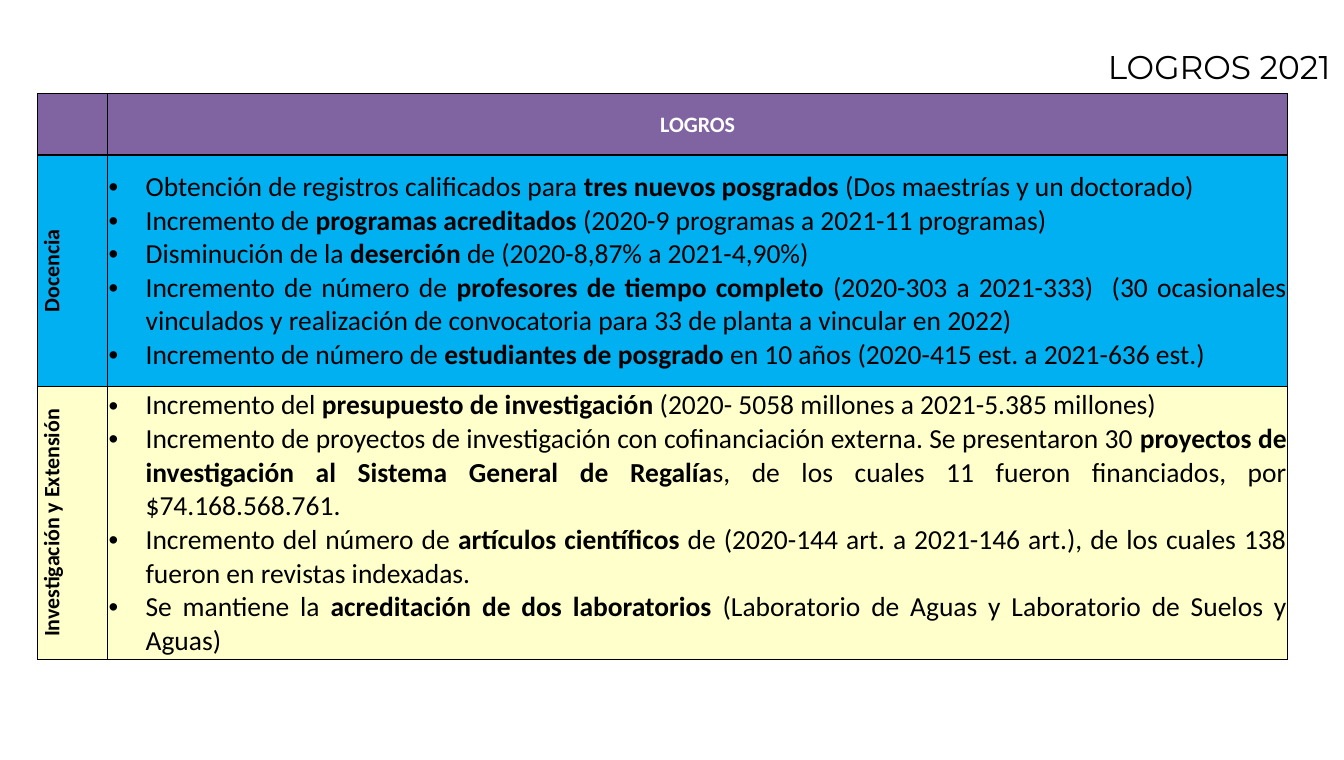
from lxml import etree
from pptx import Presentation
from pptx.dml.color import RGBColor
from pptx.enum.text import MSO_ANCHOR, PP_ALIGN
from pptx.oxml.ns import qn
from pptx.util import Cm, Pt

CENTER, JUSTIFY, RIGHT = PP_ALIGN.CENTER, PP_ALIGN.JUSTIFY, PP_ALIGN.RIGHT
MIDDLE = MSO_ANCHOR.MIDDLE
BLACK, WHITE, PURPLE = "000000", "FFFFFF", "8064A2"
INDENT = Cm(0.95)


def rgb(color):
    return RGBColor.from_string(color)


def add_run(p, text, size, color=BLACK, bold=False, font="Calibri"):
    r = p.add_run()
    r.text = text
    r.font.name = font
    r.font.size = Pt(size)
    r.font.bold = bold
    r.font.color.rgb = rgb(color)


# Each achievement: plain lead, bold key phrase, plain ending
areas = [
    ("Docencia", "00B0F0", [
        ("Obtención de registros calificados para ", "tres nuevos posgrados ",
         "(Dos maestrías y un doctorado)"),
        ("Incremento de ", "programas acreditados ",
         "(2020-9 programas a 2021-11 programas)"),
        ("Disminución de la ", "deserción", " de (2020-8,87% a 2021-4,90%)"),
        ("Incremento de número de ", "profesores de tiempo completo ",
         "(2020-303 a 2021-333)  (30 ocasionales vinculados y realización de "
         "convocatoria para 33 de planta a vincular en 2022)"),
        ("Incremento de número de ", "estudiantes de posgrado ",
         "en 10 años (2020-415 est. a 2021-636 est.)"),
    ]),
    ("Investigación y Extensión", "FFFFCC", [
        ("Incremento del ", "presupuesto de investigación ",
         "(2020- 5058 millones a 2021-5.385 millones)"),
        ("Incremento de proyectos de investigación con cofinanciación externa. "
         "Se presentaron 30 ",
         "proyectos de investigación al Sistema General de Regalía",
         "s, de los cuales 11 fueron financiados, por $74.168.568.761."),
        ("Incremento del número de ", "artículos científicos ",
         "de (2020-144 art. a 2021-146 art.), de los cuales 138 fueron en "
         "revistas indexadas."),
        ("Se mantiene la ", "acreditación de dos laboratorios ",
         "(Laboratorio de Aguas y Laboratorio de Suelos y Aguas)"),
    ]),
]

prs = Presentation()
prs.slide_width, prs.slide_height = Cm(34.52), Cm(19.51)
s = prs.slides.add_slide(prs.slide_layouts[6])

# Title
tf = s.shapes.add_textbox(Cm(1.63), Cm(1.07), Cm(32.79), Cm(1.27)).text_frame
tf.word_wrap = True
p = tf.paragraphs[0]
p.alignment = RIGHT
add_run(p, "LOGROS 2021", 23.9, font="Montserrat")

# Table grid
table = s.shapes.add_table(3, 2, Cm(0.97), Cm(2.41), Cm(32.1), Cm(14.52)).table
for column, width in zip(table.columns, (1.8, 30.3)):
    column.width = Cm(width)
for row, height in zip(table.rows, (1.57, 5.94, 7.01)):
    row.height = Cm(height)

# Cell margins, borders and fills
for row, fill in zip(table.rows, [PURPLE] + [area[1] for area in areas]):
    for cell in row.cells:
        cell.margin_left = cell.margin_right = cell.margin_top = Cm(0.02)
        cell.margin_bottom = 0
        cell.vertical_anchor = MIDDLE
        tcPr = cell._tc.get_or_add_tcPr()
        for side in ("lnL", "lnR", "lnT", "lnB"):
            ln = etree.SubElement(tcPr, qn(f"a:{side}"), w=str(Pt(1)))
            line_fill = etree.SubElement(ln, qn("a:solidFill"))
            etree.SubElement(line_fill, qn("a:srgbClr"), val=BLACK)
        cell.fill.solid()
        cell.fill.fore_color.rgb = rgb(fill)

# Header
p = table.cell(0, 1).text_frame.paragraphs[0]
p.alignment = CENTER
add_run(p, "LOGROS", 16, WHITE, bold=True)

# Areas with their achievements
for i, (area, _, achievements) in enumerate(areas, start=1):
    cell = table.cell(i, 0)
    cell._tc.get_or_add_tcPr().set("vert", "vert270")
    p = cell.text_frame.paragraphs[0]
    p.alignment = CENTER
    add_run(p, area, 16, bold=True)

    tf = table.cell(i, 1).text_frame
    for j, (lead, key, ending) in enumerate(achievements):
        p = tf.add_paragraph() if j else tf.paragraphs[0]
        p.alignment = JUSTIFY
        pPr = p._p.get_or_add_pPr()
        pPr.set("marL", str(INDENT))
        pPr.set("indent", str(-INDENT))
        etree.SubElement(pPr, qn("a:buFont"), typeface="Arial")
        etree.SubElement(pPr, qn("a:buChar"), char="•")
        add_run(p, lead, 20)
        add_run(p, key, 20, bold=True)
        add_run(p, ending, 20)

prs.save("out.pptx")
